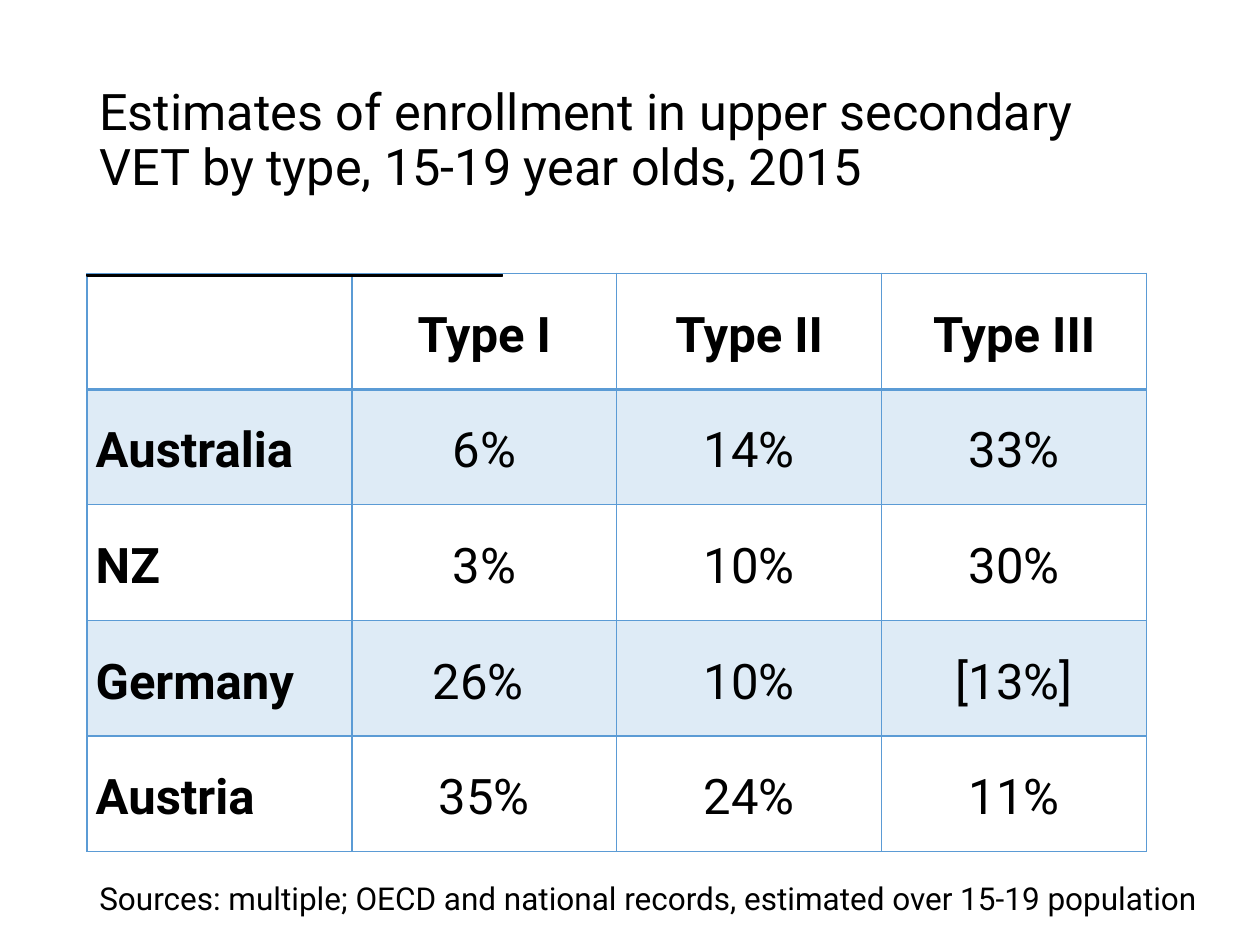
from dataclasses import dataclass

from lxml.etree import SubElement
from pptx import Presentation
from pptx.dml.color import RGBColor
from pptx.enum.shapes import MSO_SHAPE
from pptx.enum.text import MSO_ANCHOR, PP_ALIGN
from pptx.oxml.ns import qn
from pptx.util import Inches, Pt


@dataclass(frozen=True)
class Theme:
    font: str = "Roboto"
    text: str = "000000"
    accent: str = "5B9BD5"
    band_opacity: int = 20
    title_size: float = 28.8
    table_size: float = 28
    source_size: float = 18


theme = Theme()


def format_text(text_frame, size, bold=False):
    for paragraph in text_frame.paragraphs:
        for run in paragraph.runs:
            run.font.name = theme.font
            run.font.size = Pt(size)
            run.font.bold = bold
            run.font.color.rgb = RGBColor.from_string(theme.text)


def add_border(cell, side, width):
    """Draw one cell side ("L", "R", "T" or "B") in the accent colour."""
    properties = cell._tc.get_or_add_tcPr()
    line = SubElement(properties, qn(f"a:ln{side}"), w=str(Pt(width)))
    fill = SubElement(line, qn("a:solidFill"))
    SubElement(fill, qn("a:srgbClr"), val=theme.accent)


presentation = Presentation()
presentation.slide_width = Inches(10)
presentation.slide_height = Inches(7.5)
slide = presentation.slides.add_slide(presentation.slide_layouts[6])

# Title
title = slide.shapes.add_textbox(Inches(0.69), Inches(0.4), Inches(8.62), Inches(1.45))
title.text_frame.word_wrap = True
title.text_frame.vertical_anchor = MSO_ANCHOR.MIDDLE
title.text_frame.text = (
    "Estimates of enrollment in upper secondary VET by type, 15-19 year olds, 2015"
)
title.text_frame.paragraphs[0].line_spacing = 0.9
format_text(title.text_frame, theme.title_size)

# Enrollment table
enrollment = [
    ["", "Type I", "Type II", "Type III"],
    ["Australia", "6%", "14%", "33%"],
    ["NZ", "3%", "10%", "30%"],
    ["Germany", "26% ", "10%", "[13%]"],
    ["Austria", "35%", "24%", "11%"],
]
table = slide.shapes.add_table(
    len(enrollment), len(enrollment[0]),
    Inches(0.69), Inches(2.17), Inches(8.41), Inches(4.59),
).table
table.horz_banding = False

for row_index, values in enumerate(enrollment):
    is_header = row_index == 0
    for column_index, value in enumerate(values):
        cell = table.cell(row_index, column_index)
        cell.text = value
        cell.vertical_anchor = MSO_ANCHOR.MIDDLE
        cell.margin_left = cell.margin_right = Inches(0.07)
        cell.margin_top = cell.margin_bottom = 0
        paragraph = cell.text_frame.paragraphs[0]
        paragraph.line_spacing = 1.15
        paragraph.alignment = PP_ALIGN.CENTER if column_index else PP_ALIGN.LEFT
        format_text(cell.text_frame, theme.table_size, is_header or column_index == 0)

        for side in "LRTB":
            below_header = (row_index, side) in [(0, "B"), (1, "T")]
            add_border(cell, side, 2 if below_header else 1)
        if row_index % 2:
            cell.fill.solid()
            cell.fill.fore_color.rgb = RGBColor.from_string(theme.accent)
            colour = cell._tc.tcPr.find(f"{qn('a:solidFill')}/{qn('a:srgbClr')}")
            SubElement(colour, qn("a:alpha"), val=str(theme.band_opacity * 1000))
        else:
            cell.fill.background()

# Black rule over the table's top edge
rule = slide.shapes.add_shape(
    MSO_SHAPE.RECTANGLE, Inches(0.69), Inches(2.18), Inches(3.3), Inches(0.01)
)
rule.shadow.inherit = False
rule.fill.solid()
rule.fill.fore_color.rgb = RGBColor.from_string(theme.text)
rule.line.color.rgb = RGBColor.from_string(theme.text)
rule.line.width = Pt(0.75)

# Sources
sources = slide.shapes.add_textbox(Inches(0.69), Inches(6.93), Inches(10), Inches(0.71))
sources.text_frame.word_wrap = True
sources.text_frame.text = (
    "Sources: multiple; OECD and national records, estimated over 15-19 population"
)
format_text(sources.text_frame, theme.source_size)

presentation.save("out.pptx")
